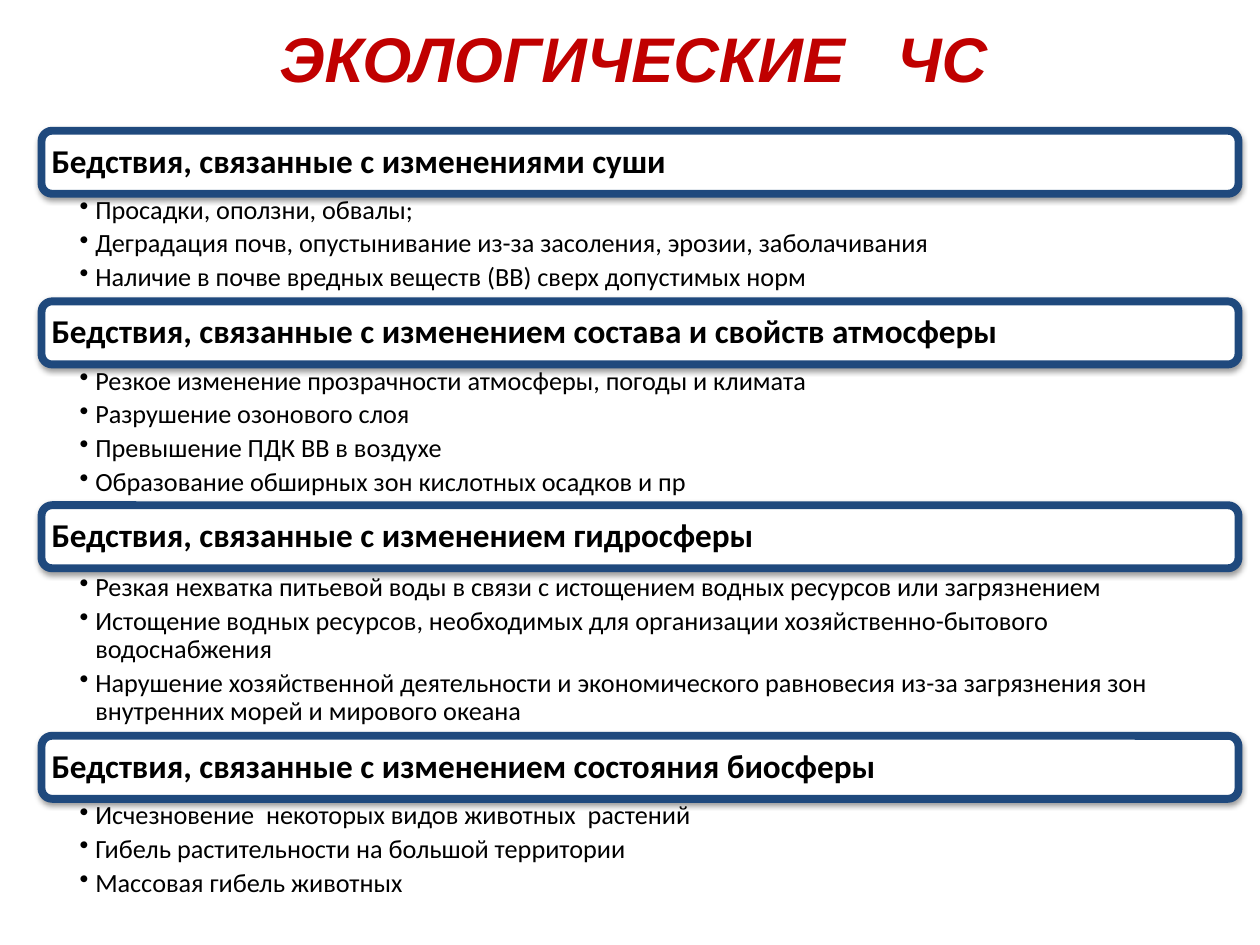
from lxml import etree
from pptx import Presentation
from pptx.dml.color import RGBColor
from pptx.enum import shapes, text
from pptx.oxml import ns
from pptx.util import Pt

HUES = {"title": "C00000", "text": "000000", "fill": "FFFFFF",
        "line": "1F497D", "shade": "000000"}
LEFT, WIDTH, HIGH = 23.75, 684, 36

# heading top, list top, list height, heading, list items
PARTS = [
    (74.75, 110.4, 62, "Бедствия, связанные с изменениями суши", [
        "Просадки, оползни, обвалы;",
        "Деградация почв, опустынивание из-за засоления, эрозии, заболачивания",
        "Наличие в почве вредных веществ (ВВ) сверх допустимых норм"]),
    (172.25, 208.1, 82, "Бедствия, связанные с изменением состава и свойств атмосферы", [
        "Резкое изменение прозрачности атмосферы, погоды и климата",
        "Разрушение озонового слоя",
        "Превышение ПДК ВВ в воздухе",
        "Образование обширных зон кислотных осадков и пр"]),
    (288.75, 326.1, 94, "Бедствия, связанные с изменением гидросферы", [
        "Резкая нехватка питьевой воды в связи с истощением водных ресурсов или загрязнением",
        "Истощение водных ресурсов, необходимых для организации "
        "хозяйственно-бытового водоснабжения",
        "Нарушение хозяйственной деятельности и экономического равновесия "
        "из-за загрязнения зон внутренних морей и мирового океана"]),
    (420.5, 456.5, 82, "Бедствия, связанные с изменением состояния биосферы", [
        "Исчезновение  некоторых видов животных  растений",
        "Гибель растительности на большой территории",
        "Массовая гибель животных"]),
]


def write(shape, lines, size, font="Calibri", hue="text", bold=False, slant=False,
          align=text.PP_ALIGN.LEFT, anchor=text.MSO_ANCHOR.MIDDLE,
          pads=(7.2, 3.6, 7.2, 3.6), space=1.0, after=0, dots=False):
    frame = shape.text_frame
    frame.word_wrap = True
    frame.vertical_anchor = anchor
    (frame.margin_left, frame.margin_top,
     frame.margin_right, frame.margin_bottom) = map(Pt, pads)
    for i, line in enumerate(lines):
        para = frame.paragraphs[0] if i == 0 else frame.add_paragraph()
        para.alignment = align
        para.line_spacing = space
        para.space_after = Pt(after)
        run = para.add_run()
        run.text = line
        run.font.name, run.font.size = font, Pt(size)
        run.font.bold, run.font.italic = bold, slant
        run.font.color.rgb = RGBColor.from_string(HUES[hue])
        if dots:
            para.level = 1
            props = para._p.get_or_add_pPr()
            props.set("marL", str(Pt(9)))
            props.set("indent", str(Pt(-9)))
            etree.SubElement(props, ns.qn("a:buChar")).set("char", "•")


def shade(shape):
    """Give the shape a soft shadow straight below it."""
    shape.shadow.inherit = False
    glow = shape._element.spPr.find(ns.qn("a:effectLst"))
    outer = etree.SubElement(glow, ns.qn("a:outerShdw"), blurRad=str(Pt(3.1)),
                             dist=str(Pt(1.6)), dir="5400000", rotWithShape="0")
    tint = etree.SubElement(outer, ns.qn("a:srgbClr"), val=HUES["shade"])
    etree.SubElement(tint, ns.qn("a:alpha"), val="38000")


deck = Presentation()
deck.slide_width, deck.slide_height = Pt(720), Pt(540)
slide = deck.slides.add_slide(deck.slide_layouts[6])

title = slide.shapes.add_textbox(Pt(20), Pt(0), Pt(WIDTH), Pt(66))
write(title, ["ЭКОЛОГИЧЕСКИЕ   ЧС"], 36, font="Arial", hue="title", bold=True,
      slant=True, align=text.PP_ALIGN.CENTER)

for top, start, tall, head, items in PARTS:
    bar = slide.shapes.add_shape(shapes.MSO_SHAPE.ROUNDED_RECTANGLE,
                                 Pt(LEFT), Pt(top), Pt(WIDTH), Pt(HIGH))
    bar.fill.solid()
    bar.fill.fore_color.rgb = RGBColor.from_string(HUES["fill"])
    bar.line.color.rgb = RGBColor.from_string(HUES["line"])
    bar.line.width = Pt(4.5)
    shade(bar)
    write(bar, [head], 19, bold=True, pads=(4, 4, 4, 4), space=0.9)

    body = slide.shapes.add_textbox(Pt(LEFT), Pt(start), Pt(WIDTH), Pt(tall))
    write(body, items, 15, anchor=text.MSO_ANCHOR.TOP,
          pads=(21.7, 1.9, 10.7, 1.9), space=0.9, after=3, dots=True)

deck.save("out.pptx")
